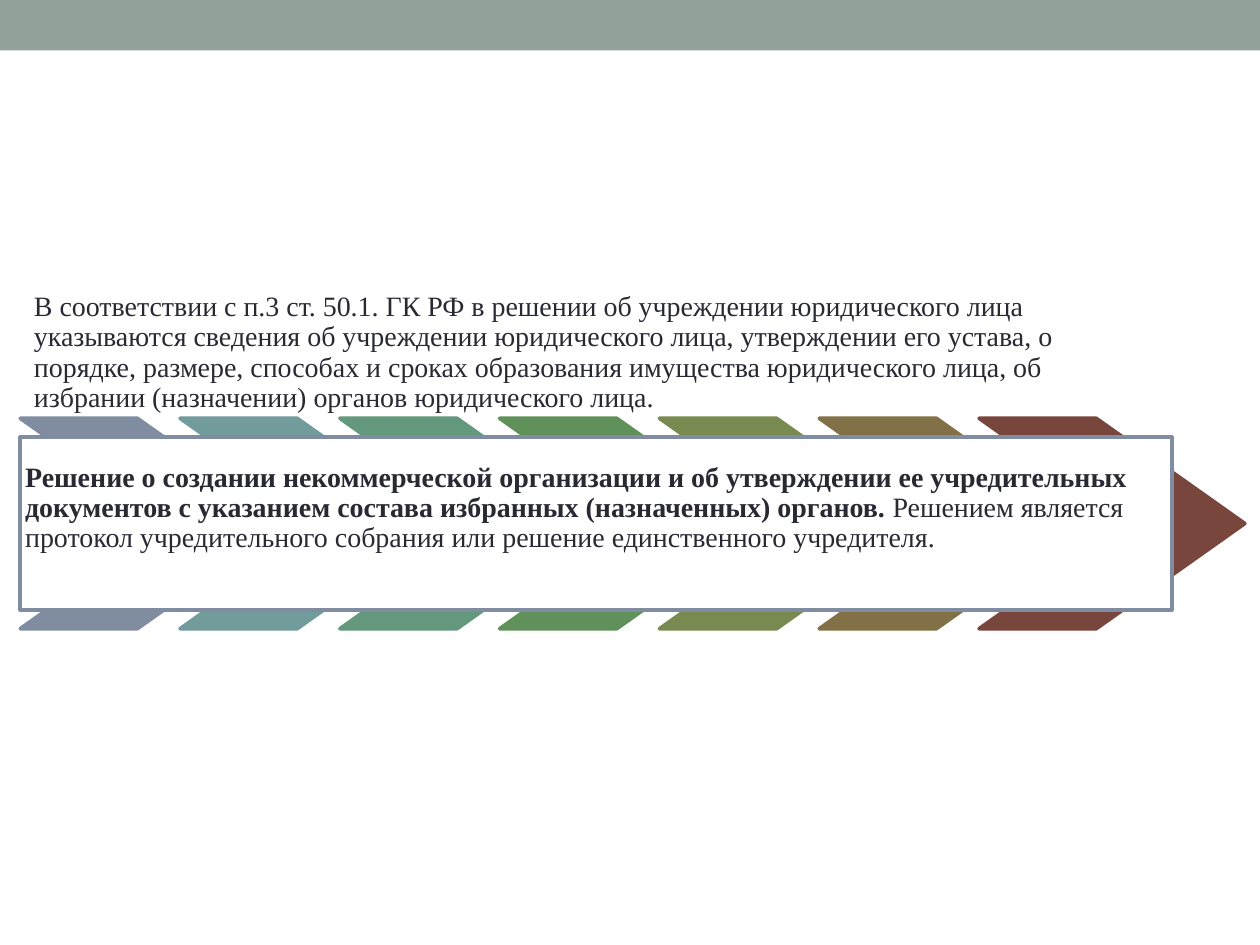
from pptx import Presentation
from pptx.dml.color import RGBColor
from pptx.enum.shapes import MSO_SHAPE
from pptx.enum.text import MSO_ANCHOR, PP_ALIGN
from pptx.util import Inches, Pt

SAGE = RGBColor(0x93, 0xA2, 0x99)
WHITE = RGBColor(0xFF, 0xFF, 0xFF)
INK = RGBColor(0x29, 0x29, 0x34)
SLATE = RGBColor(0x80, 0x8D, 0xA0)
CHEVRON_COLOURS = [
    SLATE,
    RGBColor(0x72, 0x9B, 0x9C),
    RGBColor(0x64, 0x98, 0x7C),
    RGBColor(0x61, 0x91, 0x5A),
    RGBColor(0x78, 0x8A, 0x50),
    RGBColor(0x82, 0x71, 0x46),
    RGBColor(0x79, 0x46, 0x3D),
]

LAW_TEXT = (
    "В соответствии с п.3 ст. 50.1. ГК РФ в решении об учреждении юридического лица "
    "указываются сведения об учреждении юридического лица, утверждении его устава, "
    "о порядке, размере, способах и сроках образования имущества юридического лица, "
    "об избрании (назначении) органов юридического лица."
)
DECISION_TEXT = (
    "Решение о создании некоммерческой организации и об утверждении ее учредительных "
    "документов с указанием состава избранных (назначенных) органов. "
)
PROTOCOL_TEXT = (
    "Решением является протокол учредительного собрания или решение "
    "единственного учредителя."
)


def add_filled(slide, preset, box, fill, outline=None):
    figure = slide.shapes.add_shape(preset, *(Inches(length) for length in box))
    figure.shadow.inherit = False
    figure.fill.solid()
    figure.fill.fore_color.rgb = fill
    if outline is None:
        figure.line.fill.background()
    else:
        figure.line.color.rgb = outline
        figure.line.width = Pt(2.08)
    return figure


def write_paragraph(frame, runs, anchor, inset, bottom_inset):
    frame_format = {
        "word_wrap": True,
        "vertical_anchor": anchor,
        "margin_left": Inches(inset),
        "margin_top": Inches(inset),
        "margin_right": Inches(inset),
        "margin_bottom": Inches(bottom_inset),
    }
    for name, value in frame_format.items():
        setattr(frame, name, value)
    paragraph = frame.paragraphs[0]
    paragraph.alignment = PP_ALIGN.LEFT
    paragraph.line_spacing = 0.9
    for wording, bold in runs:
        run = paragraph.add_run()
        run.text = wording
        run_format = {"name": "Times New Roman", "size": Pt(16), "bold": bold}
        for name, value in run_format.items():
            setattr(run.font, name, value)
        run.font.color.rgb = INK


def add_law_reference(slide, box):
    reference = slide.shapes.add_textbox(*(Inches(length) for length in box))
    write_paragraph(
        reference.text_frame, [(LAW_TEXT, False)], MSO_ANCHOR.BOTTOM, 0.07, 0.07
    )


def add_chevron_row(slide, box):
    left, top, width, height = box
    chevron_width = 2.11
    step = (width - chevron_width) / (len(CHEVRON_COLOURS) - 1)
    for index, colour in enumerate(CHEVRON_COLOURS):
        chevron_box = (left + index * step, top, chevron_width, height)
        chevron = add_filled(slide, MSO_SHAPE.CHEVRON, chevron_box, colour, colour)
        chevron.adjustments[0] = 0.706


def add_decision_panel(slide, box):
    panel = add_filled(slide, MSO_SHAPE.RECTANGLE, box, WHITE, SLATE)
    runs = [(DECISION_TEXT, True), (PROTOCOL_TEXT, False)]
    write_paragraph(panel.text_frame, runs, MSO_ANCHOR.MIDDLE, 0.04, 0.28)


def main():
    deck = Presentation()
    deck.slide_width, deck.slide_height = Inches(10), Inches(7.5)
    slide = deck.slides.add_slide(deck.slide_layouts[6])
    add_filled(slide, MSO_SHAPE.RECTANGLE, (0, 0, 10, 0.4), SAGE)
    add_law_reference(slide, (0.2, 2.53, 9.03, 0.82))
    add_chevron_row(slide, (0.16, 3.32, 9.72, 1.67))
    add_decision_panel(slide, (0.16, 3.47, 9.14, 1.37))
    deck.save("out.pptx")


if __name__ == "__main__":
    main()
